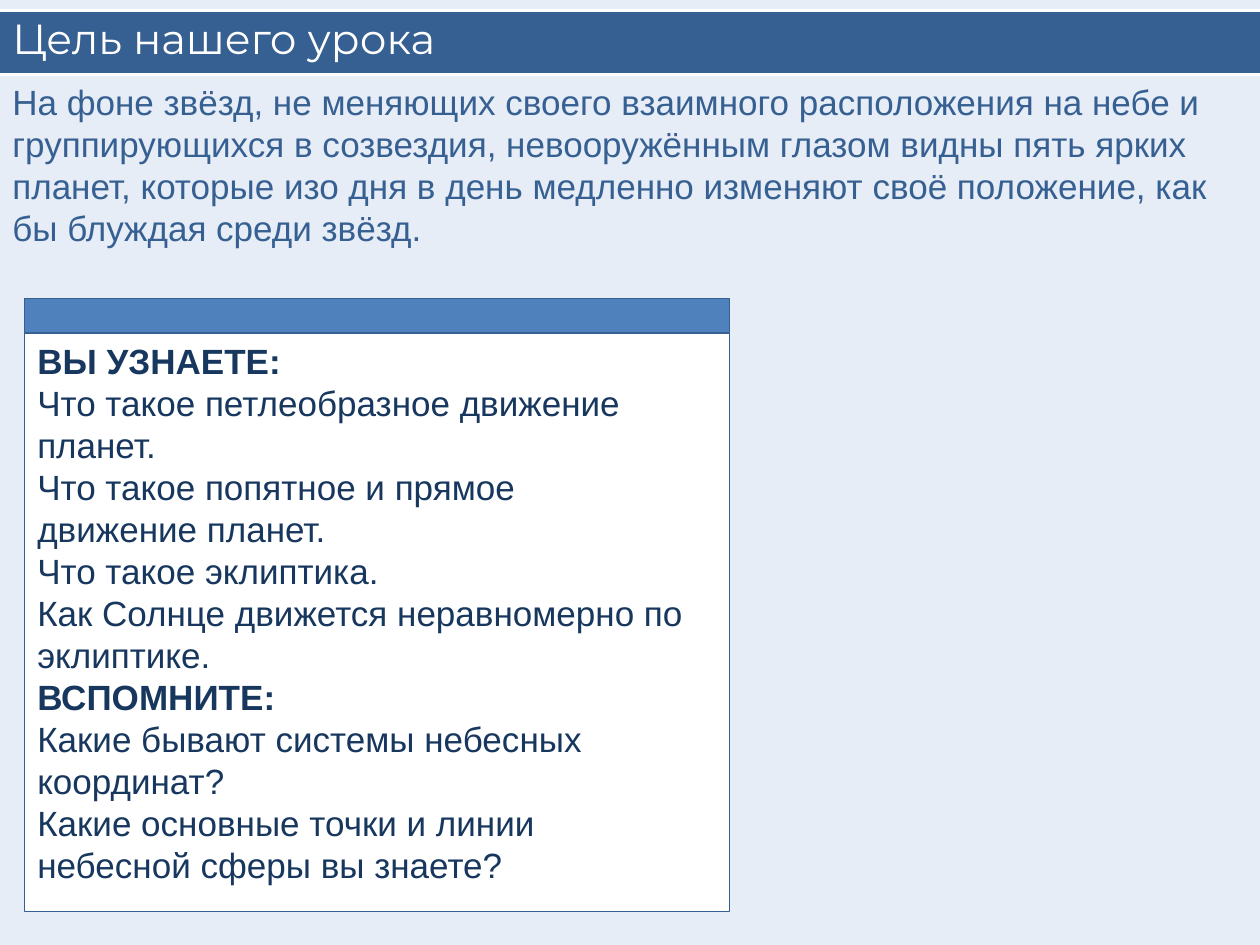
from pptx import Presentation
from pptx.dml.color import RGBColor
from pptx.enum.shapes import MSO_CONNECTOR, MSO_SHAPE
from pptx.enum.text import MSO_ANCHOR, PP_ALIGN
from pptx.oxml.ns import qn
from pptx.util import Pt
from lxml.etree import SubElement

WIDTH, HEIGHT = 720, 540
BACK, WHITE = "E6EDF6", "FFFFFF"
BLUE, LIGHT, NAVY = "376092", "4F81BD", "17375E"

TITLE = "Цель нашего урока"
INTRO = (
    "На фоне звёзд, не меняющих своего взаимного расположения на небе и "
    "группирующихся в созвездия, невооружённым глазом видны пять ярких "
    "планет, которые изо дня в день медленно изменяют своё положение, "
    "как бы блуждая среди звёзд."
)
HEADS = ("ВЫ УЗНАЕТЕ:", "ВСПОМНИТЕ:")
GOALS = [
    HEADS[0],
    "Что такое петлеобразное движение планет.",
    "Что такое попятное и прямое",
    "движение планет.",
    "Что такое эклиптика.",
    "Как Солнце движется неравномерно по эклиптике.",
    HEADS[1],
    "Какие бывают системы небесных",
    "координат?",
    "Какие основные точки и линии",
    "небесной сферы вы знаете?",
]


def color(code):
    return RGBColor.from_string(code)


def add_rect(slide, x, y, w, h, fill, edge=None):
    rect = slide.shapes.add_shape(MSO_SHAPE.RECTANGLE, Pt(x), Pt(y), Pt(w), Pt(h))
    rect.shadow.inherit = False
    rect.fill.solid()
    rect.fill.fore_color.rgb = color(fill)
    if edge:
        rect.line.color.rgb = color(edge)
        rect.line.width = Pt(0.5)
    else:
        rect.line.fill.background()
    return rect


def add_rule(slide, x, y, w):
    rule = slide.shapes.add_connector(
        MSO_CONNECTOR.STRAIGHT, Pt(x), Pt(y), Pt(x + w), Pt(y)
    )
    rule.line.color.rgb = color(WHITE)
    rule.line.width = Pt(2)
    SubElement(rule._element.spPr, qn("a:effectLst"))


def add_box(slide, x, y, w, h):
    return slide.shapes.add_textbox(Pt(x), Pt(y), Pt(w), Pt(h))


def write(shape, lines, size, font, ink, anchor=MSO_ANCHOR.TOP, pitch=None):
    """Fill the shape with one paragraph a line; pitch is the line spacing."""
    frame = shape.text_frame
    frame.word_wrap = True
    frame.vertical_anchor = anchor
    frame.text = "\n".join(lines)
    for para in frame.paragraphs:
        para.alignment = PP_ALIGN.LEFT
        if pitch:
            para.line_spacing = Pt(pitch)
        for run in para.runs:
            run.font.size = Pt(size)
            run.font.name = font
            run.font.bold = run.text in HEADS
            run.font.color.rgb = color(ink)


def add_header(slide, x, y, w, h):
    add_rect(slide, x, y, w, h, BLUE)
    for edge in (y + h, y):
        add_rule(slide, x, edge, w)
    title = add_box(slide, x, y - 9, w, h + 12)
    write(title, [TITLE], 24, "Montserrat", WHITE, MSO_ANCHOR.MIDDLE)


def add_intro(slide, x, y, w, h):
    write(add_box(slide, x, y, w, h), [INTRO], 20, "Arial", BLUE, pitch=24)


def add_goals(slide, x, y, w, h, cap=19.5):
    """Panel of goals under a coloured strip of height cap."""
    add_rect(slide, x, y, w, cap, LIGHT, BLUE)
    panel = add_rect(slide, x, y + cap, w, h - cap, WHITE, BLUE)
    write(panel, GOALS, 20, "Arial", NAVY, pitch=24)


def main():
    deck = Presentation()
    deck.slide_width, deck.slide_height = Pt(WIDTH), Pt(HEIGHT)
    slide = deck.slides.add_slide(deck.slide_layouts[6])
    slide.background.fill.solid()
    slide.background.fill.fore_color.rgb = color(BACK)
    add_header(slide, 0, 6, WIDTH, 36.5)
    add_intro(slide, 0, 42.5, WIDTH, 104.4)
    add_goals(slide, 14.2, 170.8, 402.5, 350)
    deck.save("out.pptx")


if __name__ == "__main__":
    main()
